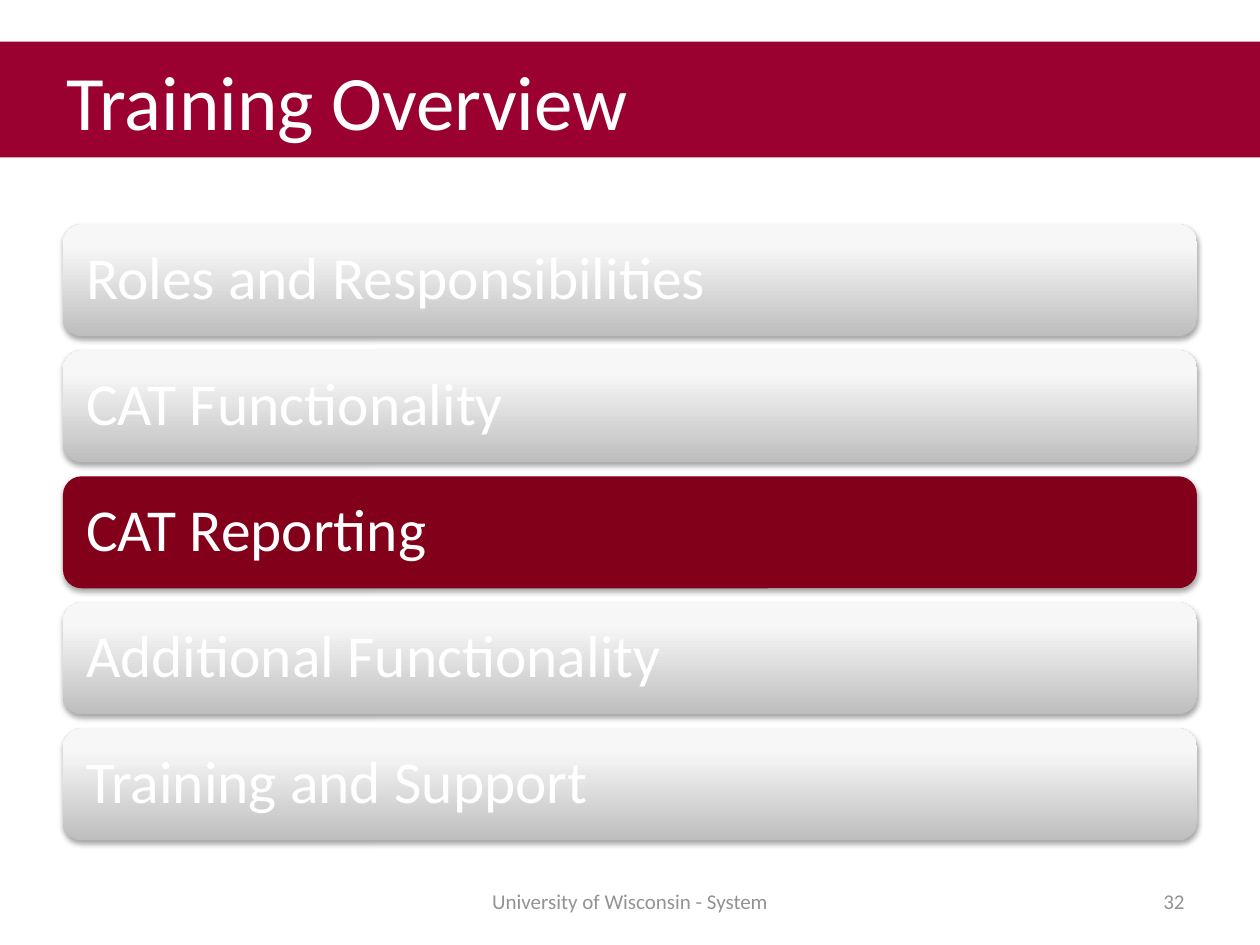
from copy import deepcopy

from lxml import etree
from pptx import Presentation
from pptx.dml.color import RGBColor
from pptx.enum.shapes import MSO_SHAPE
from pptx.enum.text import MSO_ANCHOR, PP_ALIGN
from pptx.oxml.ns import qn
from pptx.util import Inches, Pt

RECT, ROUNDED = MSO_SHAPE.RECTANGLE, MSO_SHAPE.ROUNDED_RECTANGLE
LEFT, CENTER, RIGHT = PP_ALIGN.LEFT, PP_ALIGN.CENTER, PP_ALIGN.RIGHT
MIDDLE = MSO_ANCHOR.MIDDLE

WHITE = RGBColor(0xFF, 0xFF, 0xFF)
CRIMSON = RGBColor(0x9A, 0x00, 0x30)
DARK_RED = RGBColor(0x82, 0x00, 0x1A)
GRAY = RGBColor(0x93, 0x93, 0x93)
SILVER_STOPS = [
    (0, RGBColor(0xBE, 0xBE, 0xBE)),
    (0.8, RGBColor(0xF7, 0xF7, 0xF7)),
    (1, RGBColor(0xF8, 0xF8, 0xF8)),
]

WIDTH, HEIGHT = 10, 7.5
MARGIN = 0.05 * WIDTH
TOPICS = [
    "Roles and Responsibilities",
    "CAT Functionality",
    "CAT Reporting",
    "Additional Functionality",
    "Training and Support",
]
CURRENT_TOPIC = "CAT Reporting"


def write(sp, text, size, color, align=LEFT):
    tf = sp.text_frame
    tf.word_wrap = True
    tf.vertical_anchor = MIDDLE
    p = tf.paragraphs[0]
    p.text = text
    p.alignment = align
    p.font.name = "Calibri"
    p.font.size = Pt(size)
    p.font.color.rgb = color
    return tf


def add_panel(s, kind, box):
    """Add a preset shape with no outline and no shadow."""
    sp = s.shapes.add_shape(kind, *map(Inches, box))
    sp.shadow.inherit = False
    sp.line.fill.background()
    return sp


def fill_silver(sp):
    sp.fill.gradient()
    sp.fill.gradient_angle = 90
    stops = next(sp.element.spPr.iter(qn("a:gsLst")))
    stops.append(deepcopy(stops[0]))
    for stop, (position, color) in zip(sp.fill.gradient_stops, SILVER_STOPS):
        stop.position = position
        stop.color.rgb = color


def add_soft_shadow(sp):
    effects = sp.element.spPr.find(qn("a:effectLst"))
    shadow = etree.SubElement(
        effects, qn("a:outerShdw"), blurRad=str(Pt(3.1)), dist=str(Pt(1.8)),
        dir="5400000", rotWithShape="0")
    color = etree.SubElement(shadow, qn("a:srgbClr"), val="000000")
    etree.SubElement(color, qn("a:alpha"), val="35000")


def add_title_band(s, box, text):
    sp = add_panel(s, RECT, box)
    sp.fill.solid()
    sp.fill.fore_color.rgb = CRIMSON
    tf = write(sp, text, 44, WHITE)
    tf.margin_left = Inches(0.53)


def add_topic_bars(s, box, topics, current):
    """Stack one bar per topic; the gap is an eighth of a bar."""
    x, y, w, h = box
    pitch = h / (len(topics) - 1 / 9)
    for row, topic in enumerate(topics):
        sp = add_panel(s, ROUNDED, (x, y + row * pitch, w, pitch * 8 / 9))
        if topic == current:
            sp.fill.solid()
            sp.fill.fore_color.rgb = DARK_RED
        else:
            fill_silver(sp)
        add_soft_shadow(sp)
        tf = write(sp, topic, 34, WHITE)
        tf.margin_left = tf.margin_right = Inches(0.14)
        tf.paragraphs[0].line_spacing = 0.9


def add_footer(s, box, text, number):
    x, y, w, h = box
    center_w, number_w = 0.35 * w, 0.26 * w
    for left, width, content, align in [
        (x + (w - center_w) / 2, center_w, text, CENTER),
        (x + w - number_w, number_w, number, RIGHT),
    ]:
        sp = s.shapes.add_textbox(*map(Inches, (left, y, width, h)))
        write(sp, content, 12, GRAY, align)


def main():
    prs = Presentation()
    prs.slide_width, prs.slide_height = Inches(WIDTH), Inches(HEIGHT)
    s = prs.slides.add_slide(prs.slide_layouts[6])
    inner = WIDTH - 2 * MARGIN
    add_topic_bars(s, (MARGIN, 1.78, inner, 4.89), TOPICS, CURRENT_TOPIC)
    add_footer(s, (MARGIN, 6.95, inner, 0.4),
               "University of Wisconsin - System", "32")
    add_title_band(s, (0, 0.33, WIDTH, 0.92), "Training Overview")
    prs.save("out.pptx")


if __name__ == "__main__":
    main()
